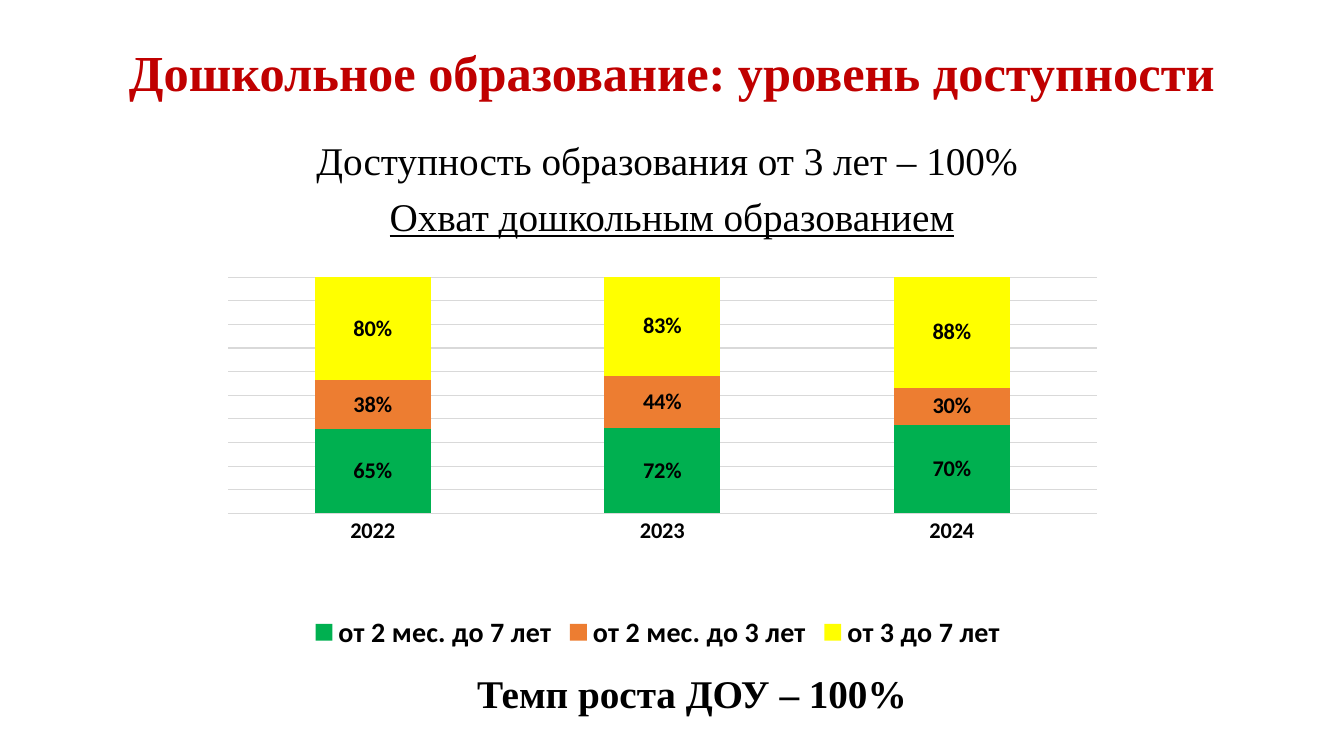
from lxml.etree import SubElement
from pptx import Presentation
from pptx.chart.data import CategoryChartData
from pptx.dml.color import RGBColor
from pptx.enum.chart import XL_CHART_TYPE, XL_LEGEND_POSITION, XL_TICK_MARK
from pptx.enum.text import MSO_ANCHOR, PP_ALIGN
from pptx.oxml.ns import qn
from pptx.util import Pt

EMU_PER_PX = 9525
SLIDE_WIDTH, SLIDE_HEIGHT = 1280, 720
SERIF, SANS = "Times New Roman", "Calibri"

RED = RGBColor(0xC0, 0x00, 0x00)
BLACK = RGBColor(0x00, 0x00, 0x00)
GRID_GREY = RGBColor(0xD9, 0xD9, 0xD9)
GREEN = RGBColor(0x00, 0xB0, 0x50)
ORANGE = RGBColor(0xED, 0x7D, 0x31)
YELLOW = RGBColor(0xFF, 0xFF, 0x00)

YEARS = ["2022", "2023", "2024"]
COVERAGE = [
    ("от 2 мес. до 7 лет", (0.65, 0.72, 0.70), GREEN),
    ("от 2 мес. до 3 лет", (0.38, 0.44, 0.30), ORANGE),
    ("от 3 до 7 лет", (0.80, 0.83, 0.88), YELLOW),
]
PLOT_AREA = {"x": 0.02, "y": 0.04, "w": 0.97, "h": 0.6}


def to_emu(box):
    return [length * EMU_PER_PX for length in box]


def style_font(font, name, size, color, bold=False):
    font.name = name
    font.size = Pt(size)
    font.bold = bold
    font.color.rgb = color


def add_line(paragraph, text, size, color=BLACK, bold=False, underline=False):
    paragraph.alignment = PP_ALIGN.CENTER
    run = paragraph.add_run()
    run.text = text
    style_font(run.font, SERIF, size, color, bold)
    if underline:
        run.font.underline = True


def add_text_frame(slide, box):
    text_frame = slide.shapes.add_textbox(*to_emu(box)).text_frame
    text_frame.word_wrap = True
    return text_frame


def place_title(slide, box):
    title = slide.shapes.title
    title.left, title.top, title.width, title.height = to_emu(box)
    title.text_frame.vertical_anchor = MSO_ANCHOR.MIDDLE
    paragraph = title.text_frame.paragraphs[0]
    paragraph.line_spacing = 0.9
    add_line(paragraph, "Дошкольное образование: уровень доступности", 36, RED, bold=True)


def add_introduction(slide, box):
    text_frame = add_text_frame(slide, box)
    add_line(text_frame.paragraphs[0], "Доступность образования от 3 лет – 100% ", 28)
    add_line(text_frame.add_paragraph(), "Охват дошкольным образованием", 28, underline=True)
    for paragraph in text_frame.paragraphs:
        paragraph.line_spacing = 0.9
        paragraph.space_before = Pt(10)


def fix_plot_area(chart):
    """Pin the inner plot area to fractions of the chart."""
    plot_area = chart.plots[0]._element.getparent()
    layout = plot_area.find(qn("c:layout"))
    if layout is None:
        layout = SubElement(plot_area, qn("c:layout"))
        plot_area.insert(0, layout)
    manual = SubElement(layout, qn("c:manualLayout"))
    settings = [("layoutTarget", "inner"), ("xMode", "edge"), ("yMode", "edge")]
    for tag, value in settings + list(PLOT_AREA.items()):
        SubElement(manual, qn(f"c:{tag}")).set("val", str(value))


def style_axes(chart):
    category_axis = chart.category_axis
    category_axis.major_tick_mark = XL_TICK_MARK.NONE
    category_axis.format.line.color.rgb = GRID_GREY
    category_axis.format.line.width = Pt(0.75)
    style_font(category_axis.tick_labels.font, SANS, 16, BLACK, bold=True)

    value_axis = chart.value_axis
    value_axis.visible = False
    value_axis.minimum_scale, value_axis.maximum_scale = 0, 1
    value_axis.major_unit = 0.1
    value_axis.tick_labels.number_format = "0%"
    value_axis.tick_labels.number_format_is_linked = False
    grid_line = value_axis.major_gridlines.format.line
    grid_line.color.rgb = GRID_GREY
    grid_line.width = Pt(0.75)


def add_coverage_chart(slide, box):
    data = CategoryChartData(number_format="0%")
    data.categories = YEARS
    for name, values, _ in COVERAGE:
        data.add_series(name, values)
    chart = slide.shapes.add_chart(
        XL_CHART_TYPE.COLUMN_STACKED_100, *to_emu(box), data
    ).chart
    chart.has_title = False
    style_font(chart.font, SANS, 10, BLACK)
    fix_plot_area(chart)
    style_axes(chart)

    # Columns and their labels
    plot = chart.plots[0]
    plot.gap_width, plot.overlap = 150, 100
    plot.vary_by_categories = False
    for series, (_, _, color) in zip(plot.series, COVERAGE):
        series.format.fill.solid()
        series.format.fill.fore_color.rgb = color
        labels = series.data_labels
        labels.show_value = True
        labels.number_format = "0%"
        labels.number_format_is_linked = False
        style_font(labels.font, SANS, 16, BLACK, bold=True)

    # Legend
    chart.has_legend = True
    chart.legend.position = XL_LEGEND_POSITION.BOTTOM
    chart.legend.include_in_layout = False
    style_font(chart.legend.font, SANS, 20, BLACK, bold=True)


def add_conclusion(slide, box):
    text_frame = add_text_frame(slide, box)
    add_line(text_frame.paragraphs[0], "Темп роста ДОУ – 100%", 28, bold=True)


def main():
    presentation = Presentation()
    presentation.slide_width, presentation.slide_height = to_emu((SLIDE_WIDTH, SLIDE_HEIGHT))
    slide = presentation.slides.add_slide(presentation.slide_layouts.get_by_name("Title Only"))
    place_title(slide, (88, 38, 1104, 67))
    add_introduction(slide, (88, 130, 1104, 518))
    add_coverage_chart(slide, (200, 249, 853, 375))
    add_conclusion(slide, (107, 633, 1104, 55))
    presentation.save("out.pptx")


if __name__ == "__main__":
    main()
